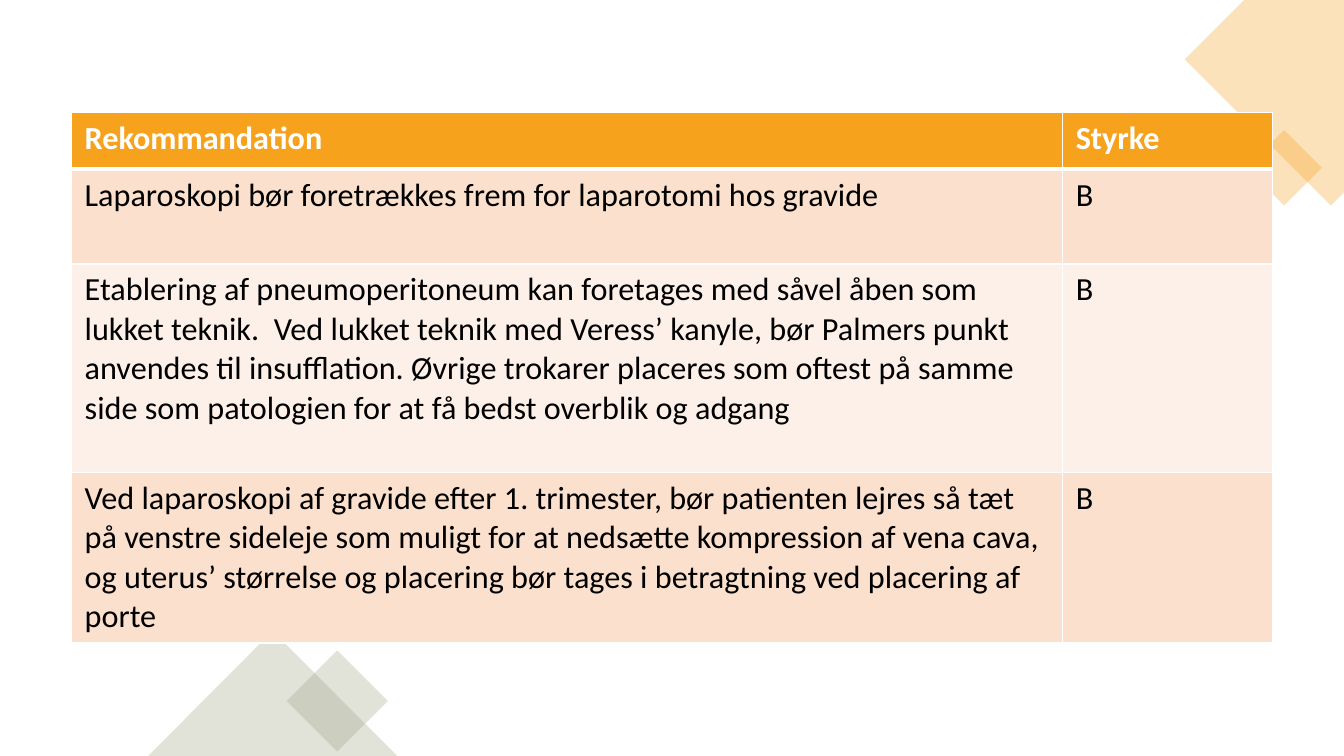
from lxml.etree import SubElement
from pptx import Presentation
from pptx.dml.color import RGBColor as Rgb
from pptx.enum.shapes import MSO_SHAPE as Shape
from pptx.oxml.ns import qn
from pptx.util import Inches, Pt

COLORS = {"white": "FFFFFF", "black": "000000", "orange": "F6A21D",
          "sage": "9CA383", "peach": "FBE0CD", "cream": "FDF0E8"}
SLIDE_SIZE = (13.33, 7.5)
TABLE_ORIGIN = (0.71, 1.12)
COLUMN_WIDTHS = (9.83, 2.08)
ROW_HEIGHTS = (0.56, 0.94, 2.07, 1.69)
CORNER_OUTLINE = ((13.33, 0), (12.34, 0), (11.75, 0.59), (13.2, 2.04), (13.33, 1.91))
RECOMMENDATIONS = (
    ("Rekommandation", "Styrke"),
    ("Laparoskopi bør foretrækkes frem for laparotomi hos gravide", "B"),
    ("Etablering af pneumoperitoneum kan foretages med såvel åben som lukket "
     "teknik.  Ved lukket teknik med Veress’ kanyle, bør Palmers punkt anvendes "
     "til insufflation. Øvrige trokarer placeres som oftest på samme side som "
     "patologien for at få bedst overblik og adgang", "B"),
    ("Ved laparoskopi af gravide efter 1. trimester, bør patienten lejres så tæt "
     "på venstre sideleje som muligt for at nedsætte kompression af vena cava, og "
     "uterus’ størrelse og placering bør tages i betragtning ved placering af "
     "porte", "B"),
)


def paint(fill, color):
    """Give a fill one solid palette colour."""
    fill.solid()
    fill.fore_color.rgb = Rgb.from_string(COLORS[color])


def tint(ornament, color):
    """Make an ornament flat, borderless and 30 percent opaque."""
    ornament.shadow.inherit = False
    ornament.line.fill.background()
    paint(ornament.fill, color)
    tone = ornament.fill._xPr.find(qn("a:solidFill"))[0]
    SubElement(tone, qn("a:alpha"), val="30000")


def add_ornament(slide, preset, box, color, rotation=0):
    """Place a translucent preset shape."""
    ornament = slide.shapes.add_shape(preset, *map(Inches, box))
    ornament.rotation = rotation
    tint(ornament, color)


def add_corner(slide, outline, color):
    """Draw the cropped diamond in the top corner."""
    points = [(Inches(x), Inches(y)) for x, y in outline]
    builder = slide.shapes.build_freeform(*points[0])
    builder.add_line_segments(points[1:], close=True)
    tint(builder.convert_to_shape(), color)


def add_border(cell, side, width):
    """Draw one white edge of a cell."""
    edge = SubElement(cell._tc.get_or_add_tcPr(), qn(f"a:ln{side}"), w=str(Pt(width)))
    SubElement(SubElement(edge, qn("a:solidFill")), qn("a:srgbClr"), val=COLORS["white"])


def fill_cell(cell, wording, row):
    """Write and style one cell according to its row."""
    is_header = row == 0
    widths = {"L": 1, "R": 1, "T": 3 if row == 1 else 1, "B": 3 if is_header else 1}
    for side, width in widths.items():
        add_border(cell, side, width)
    paint(cell.fill, "orange" if is_header else ("cream", "peach")[row % 2])
    cell.margin_left = cell.margin_right = Inches(0.13)
    cell.margin_top = cell.margin_bottom = Inches(0.06)
    run = cell.text_frame.paragraphs[0].add_run()
    run.text = wording
    run.font.name, run.font.size, run.font.bold = "Calibri", Pt(23), is_header
    run.font.color.rgb = Rgb.from_string(COLORS["white" if is_header else "black"])


def add_recommendations(slide):
    """Build the table of recommendations and their strength."""
    size = (sum(COLUMN_WIDTHS), sum(ROW_HEIGHTS))
    table = slide.shapes.add_table(len(ROW_HEIGHTS), len(COLUMN_WIDTHS),
                                   *map(Inches, TABLE_ORIGIN + size)).table
    for column, width in zip(table.columns, COLUMN_WIDTHS):
        column.width = Inches(width)
    for row, height in enumerate(ROW_HEIGHTS):
        table.rows[row].height = Inches(height)
        for column, wording in enumerate(RECOMMENDATIONS[row]):
            fill_cell(table.cell(row, column), wording, row)


def main():
    """Compose the slide and save it."""
    deck = Presentation()
    deck.slide_width, deck.slide_height = map(Inches, SLIDE_SIZE)
    slide = deck.slides.add_slide(deck.slide_layouts[6])
    paint(slide.background.fill, "white")
    add_corner(slide, CORNER_OUTLINE, "orange")
    add_ornament(slide, Shape.RECTANGLE, (12.47, 1.4, 0.53, 0.53), "orange", 45)
    add_ornament(slide, Shape.RECTANGLE, (2.99, 6.6, 0.71, 0.71), "sage", 45)
    add_ornament(slide, Shape.ISOSCELES_TRIANGLE, (1.47, 6.26, 2.47, 1.24), "sage")
    add_recommendations(slide)
    deck.save("out.pptx")


if __name__ == "__main__":
    main()
